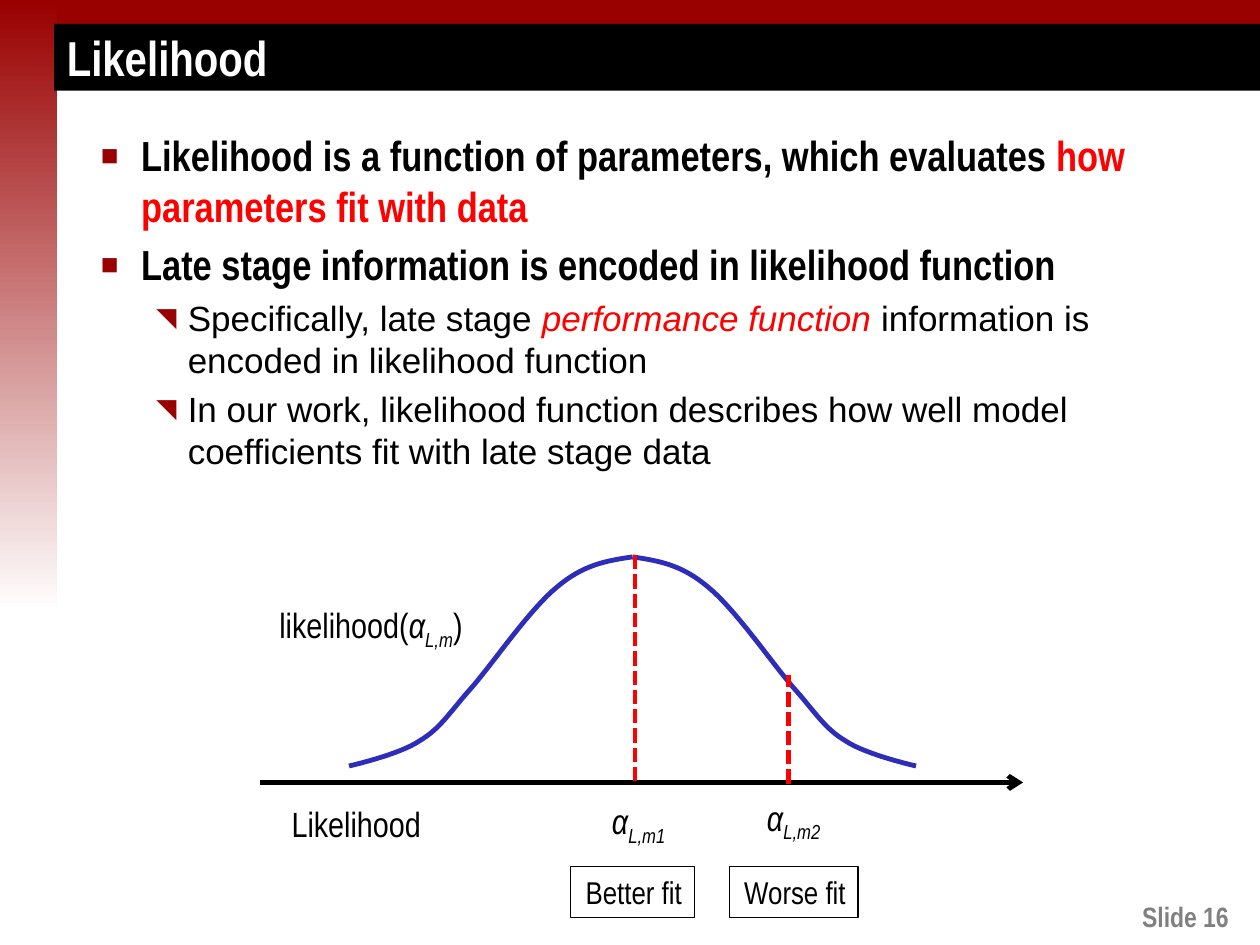
import pptx
import pptx.util
import pptx.dml.color
import pptx.enum.dml
import pptx.enum.shapes
import pptx.enum.text
import pptx.oxml
import pptx.oxml.ns
from pptx.util import Inches

COLORS = {
    "crimson": "990000", "white": "FFFFFF", "black": "000000",
    "red": "FF0000", "gray": "808080", "blue": "2D2DB9",
}
NARROW, WIDE = "Arial Narrow", "Arial"
ALIGN = pptx.enum.text.PP_ALIGN
DASH = pptx.enum.dml.MSO_LINE.SQUARE_DOT


def rgb(name):
    return pptx.dml.color.RGBColor.from_string(COLORS[name])


def add_child(parent, tag, **attributes):
    child = pptx.oxml.parse_xml(f"<a:{tag} {pptx.oxml.ns.nsdecls('a')}/>")
    for key, value in attributes.items():
        child.set(key, value)
    parent.append(child)
    return child


def bezier(start, control1, control2, end, steps=16):
    """Points along a cubic curve, without its start."""
    for step in range(1, steps + 1):
        t = step / steps
        weights = ((1 - t) ** 3, 3 * t * (1 - t) ** 2, 3 * t * t * (1 - t), t ** 3)
        knots = (start, control1, control2, end)
        yield tuple(sum(w * knot[axis] for w, knot in zip(weights, knots)) for axis in (0, 1))


class SlideBuilder:
    def __init__(self, slide):
        self.slide = slide

    def place(self, shape, left, top, width, height):
        shape.left, shape.top = Inches(left), Inches(top)
        shape.width, shape.height = Inches(width), Inches(height)

    def style_run(self, run, size, font=NARROW, color="black", bold=False,
                  italic=False, subscript=False):
        run.font.size = pptx.util.Pt(size)
        run.font.name = font
        run.font.bold = bold
        run.font.italic = italic
        run.font.color.rgb = rgb(color)
        if subscript:
            run._r.get_or_add_rPr().set("baseline", "-25000")

    def add_runs(self, paragraph, parts, **style):
        """Each part is (text, style changes)."""
        for text, changes in parts:
            run = paragraph.add_run()
            run.text = text
            self.style_run(run, **{**style, **changes})

    def bar(self, width, height, gradient=False):
        shape = self.slide.shapes.add_shape(
            pptx.enum.shapes.MSO_SHAPE.RECTANGLE, 0, 0, Inches(width), Inches(height))
        shape.shadow.inherit = False
        shape.line.fill.background()
        if gradient:
            shape.fill.gradient()
            shape.fill.gradient_angle = 270
            for stop, position, color in zip(shape.fill.gradient_stops, (0, 1), ("crimson", "white")):
                stop.position = position
                stop.color.rgb = rgb(color)
        else:
            shape.fill.solid()
            shape.fill.fore_color.rgb = rgb("crimson")

    def title(self, text, *box):
        shape = self.slide.shapes.title
        self.place(shape, *box)
        shape.fill.solid()
        shape.fill.fore_color.rgb = rgb("black")
        frame = shape.text_frame
        frame.text = text
        frame.auto_size = pptx.enum.text.MSO_AUTO_SIZE.NONE
        frame.vertical_anchor = pptx.enum.text.MSO_ANCHOR.MIDDLE
        paragraph = frame.paragraphs[0]
        paragraph.alignment = ALIGN.LEFT
        self.style_run(paragraph.runs[0], 28, color="white", bold=True)

    def bullets(self, items, *box):
        shape = self.slide.placeholders[1]
        self.place(shape, *box)
        frame = shape.text_frame
        frame.auto_size = pptx.enum.text.MSO_AUTO_SIZE.NONE
        levels = (
            (0.32, -0.32, "■", "70000", dict(size=24, bold=True)),
            (0.69, -0.25, "◥", "75000", dict(size=20, font=WIDE)),
        )
        for index, (level, parts) in enumerate(items):
            paragraph = frame.add_paragraph() if index else frame.paragraphs[0]
            margin, indent, mark, mark_size, style = levels[level]
            paragraph.level = level
            properties = paragraph._p.get_or_add_pPr()
            properties.set("marL", str(Inches(margin)))
            properties.set("indent", str(Inches(indent)))
            add_child(add_child(properties, "buClr"), "srgbClr", val=COLORS["crimson"])
            add_child(properties, "buSzPct", val=mark_size)
            add_child(properties, "buFont", typeface=WIDE)
            add_child(properties, "buChar", char=mark)
            self.add_runs(paragraph, parts, **style)

    def label(self, parts, *box, size=20, wrap=False, border=False, **style):
        shape = self.slide.shapes.add_textbox(*map(Inches, box))
        frame = shape.text_frame
        frame.word_wrap = wrap
        frame.auto_size = pptx.enum.text.MSO_AUTO_SIZE.SHAPE_TO_FIT_TEXT
        if border:
            shape.line.color.rgb = rgb("black")
            shape.line.width = pptx.util.Pt(0.75)
        frame.paragraphs[0].alignment = ALIGN.RIGHT
        self.add_runs(frame.paragraphs[0], parts, size=size, **style)

    def line(self, x1, y1, x2, y2, color, dash=None, arrow=False):
        connector = self.slide.shapes.add_connector(
            pptx.enum.shapes.MSO_CONNECTOR.STRAIGHT, *map(Inches, (x1, y1, x2, y2)))
        connector.line.color.rgb = rgb(color)
        connector.line.width = pptx.util.Pt(2.75)
        if dash:
            connector.line.dash_style = dash
        if arrow:
            add_child(connector.line._get_or_add_ln(), "tailEnd", type="arrow")
        add_child(connector._element.spPr, "effectLst")

    def curve(self, points, color):
        start, *rest = [(Inches(x), Inches(y)) for x, y in points]
        builder = self.slide.shapes.build_freeform(*start)
        builder.add_line_segments(rest, close=False)
        shape = builder.convert_to_shape()
        shape.shadow.inherit = False
        shape.fill.background()
        shape.line.color.rgb = rgb(color)
        shape.line.width = pptx.util.Pt(2.75)


def main():
    presentation = pptx.Presentation()
    presentation.slide_width, presentation.slide_height = Inches(10), Inches(7.5)
    slide = presentation.slides.add_slide(presentation.slide_layouts[1])
    builder = SlideBuilder(slide)

    # Frame and title; the bars go behind the placeholders
    builder.bar(10, 0.25)
    builder.bar(0.45, 4.86, gradient=True)
    for bar in list(slide.shapes)[:1:-1]:
        slide.shapes._spTree.insert(2, bar._element)
    builder.title("Likelihood", 0.43, 0.19, 9.57, 0.53)
    builder.label([("Slide 16", {})], 0.7, 7.09, 9.15, 0.37,
                  size=16, wrap=True, color="gray", bold=True)

    # Bullet list
    red = dict(color="red")
    builder.bullets([
        (0, [("Likelihood is a function of parameters, which evaluates ", {}),
             ("how parameters fit with data", red)]),
        (0, [("Late stage information is encoded in likelihood function", {})]),
        (1, [("Specifically, late stage ", {}),
             ("performance function", dict(color="red", italic=True)),
             (" information is encoded in likelihood function", {})]),
        (1, [("In our work, likelihood function describes how well model "
              "coefficients fit with late stage data", {})]),
    ], 0.7, 0.98, 8.64, 6.05)

    # Axis and the two halves of the bell curve, mirrored about the peak
    builder.line(2.06, 6.21, 8.12, 6.21, "black", arrow=True)
    peak = 5.02
    knots = [(5.02, 4.42), (5.22, 4.45), (5.41, 4.48), (5.62, 4.66), (5.83, 4.83),
             (6.11, 5.24), (6.29, 5.45), (6.47, 5.65), (6.54, 5.78), (6.71, 5.88),
             (6.87, 5.99), (7.27, 6.08), (7.27, 6.08)]
    right_half = [knots[0]]
    for first in range(0, len(knots) - 1, 3):
        right_half += bezier(*knots[first:first + 4])
    left_half = [(2 * peak - x, y) for x, y in right_half]
    for half in (right_half, left_half):
        builder.curve(half, "blue")

    # Markers for the two parameter values
    builder.line(6.26, 6.22, 6.26, 5.36, "red", dash=DASH)
    builder.line(5.04, 6.2, 5.04, 4.4, "red", dash=DASH)

    # Labels
    italic, subscript = dict(italic=True), dict(italic=True, subscript=True)
    builder.label([("Likelihood", {})], 1.86, 6.32, 1.58, 0.44, wrap=True)
    builder.label([("likelihood(", {}), ("α", italic), ("L,m", subscript), (")", {})],
                  2.07, 4.74, 1.7, 0.44)
    for name, left, top in (("L,m2", 5.93, 6.27), ("L,m1", 4.7, 6.3)):
        builder.label([("α", italic), (name, subscript)], left, top, 0.68, 0.44)
    for text, left, width in (("Better fit", 4.53, 0.98), ("Worse fit", 5.79, 1.02)):
        builder.label([(text, {})], left, 6.88, width, 0.4, size=18, border=True)

    presentation.save("out.pptx")


if __name__ == "__main__":
    main()
